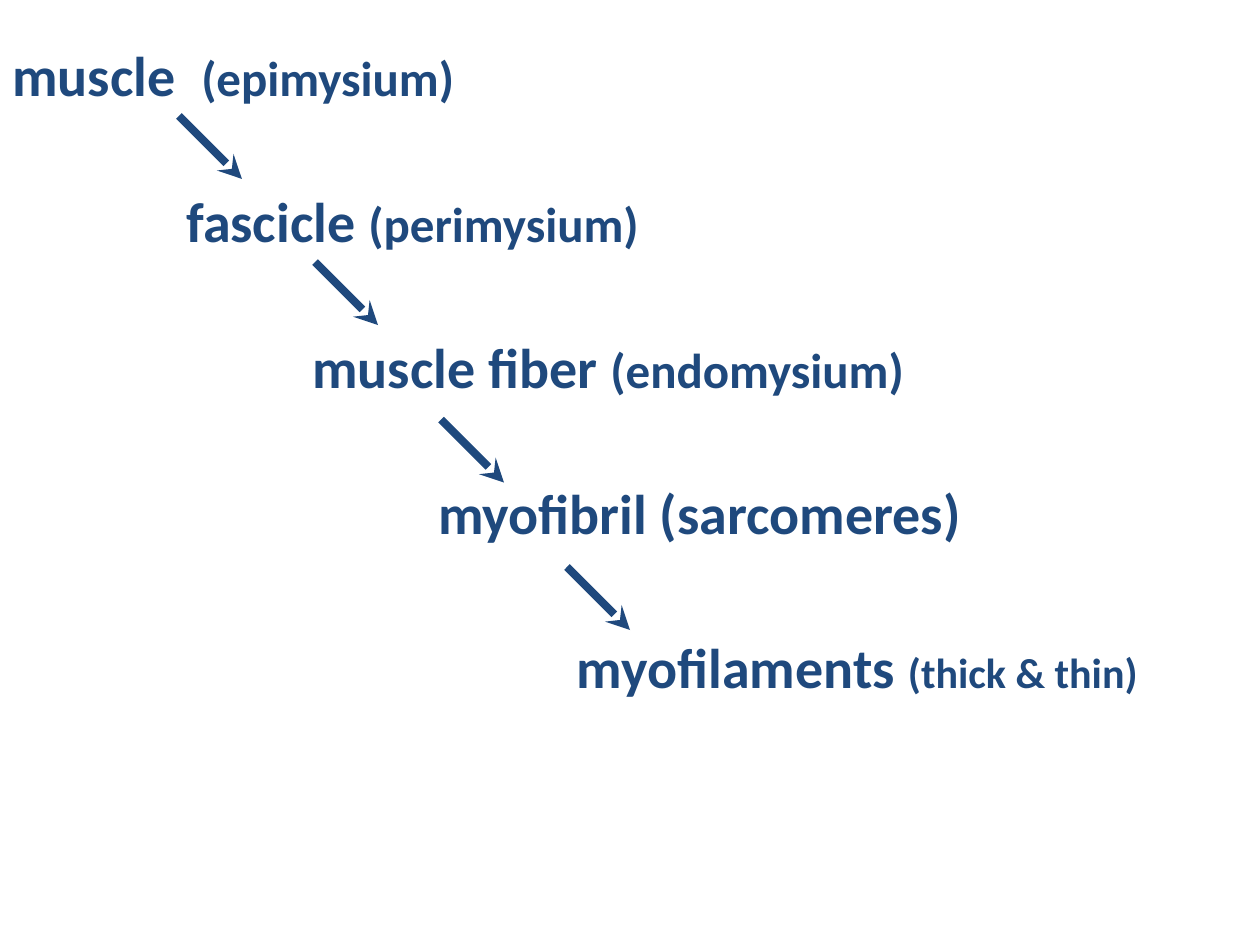
from pptx import Presentation
from pptx.dml.color import RGBColor
from pptx.enum.shapes import MSO_CONNECTOR as CONN
from pptx.oxml.ns import qn
from pptx.util import Inches, Pt
from lxml.etree import SubElement

NAVY = "1F497D"
LEVELS = [
    (0, 0, [("muscle  ", 32), ("(epimysium)", 28)]),
    (1.38, 45, [("fascicle ", 32), ("(perimysium)", 28)]),
    (2.38, 45, [("muscle fiber ", 32), ("(endomysium)", 28)]),
    (3.38, 45, [("myofibril (sarcomeres)", 32)]),
    (4.48, 50, [("myofilaments ", 32), ("(thick & thin)", 24)]),
]
ARROWS = [(1.42, 0.67), (2.5, 1.83), (3.5, 3.08), (4.5, 4.25)]
ARROW_SPAN = 0.5


def rgb(value):
    return RGBColor.from_string(value)


def add_levels(s, x, y, w, h):
    tf = s.shapes.add_textbox(Inches(x), Inches(y), Inches(w), Inches(h)).text_frame
    tf.word_wrap = True
    for i, (indent, gap, parts) in enumerate(LEVELS):
        p = tf.add_paragraph() if i else tf.paragraphs[0]
        p.space_before = Pt(gap)
        p._p.get_or_add_pPr().set("marL", str(Inches(indent)))
        for text, size in parts:
            r = p.add_run()
            r.text = text
            r.font.name = "Calibri"
            r.font.size = Pt(size)
            r.font.bold = True
            r.font.color.rgb = rgb(NAVY)


def add_arrow(s, x, y):
    c = s.shapes.add_connector(CONN.STRAIGHT, Inches(x), Inches(y),
                               Inches(x + ARROW_SPAN), Inches(y + ARROW_SPAN))
    c.line.color.rgb = rgb(NAVY)
    c.line.width = Pt(4.5)
    SubElement(c.line._get_or_add_ln(), qn("a:tailEnd"), type="stealth")
    SubElement(c._element.spPr, qn("a:effectLst"))


def add_hierarchy(s, x, y, w, h):
    add_levels(s, x, y + 0.02, w, h - 0.02)
    for dx, dy in ARROWS:
        add_arrow(s, x + dx, y + dy)


def main():
    prs = Presentation()
    prs.slide_width, prs.slide_height = Inches(10), Inches(7.5)
    s = prs.slides.add_slide(prs.slide_layouts[6])
    add_hierarchy(s, 0, 0.25, 10, 7.25)
    prs.save("out.pptx")


if __name__ == "__main__":
    main()
